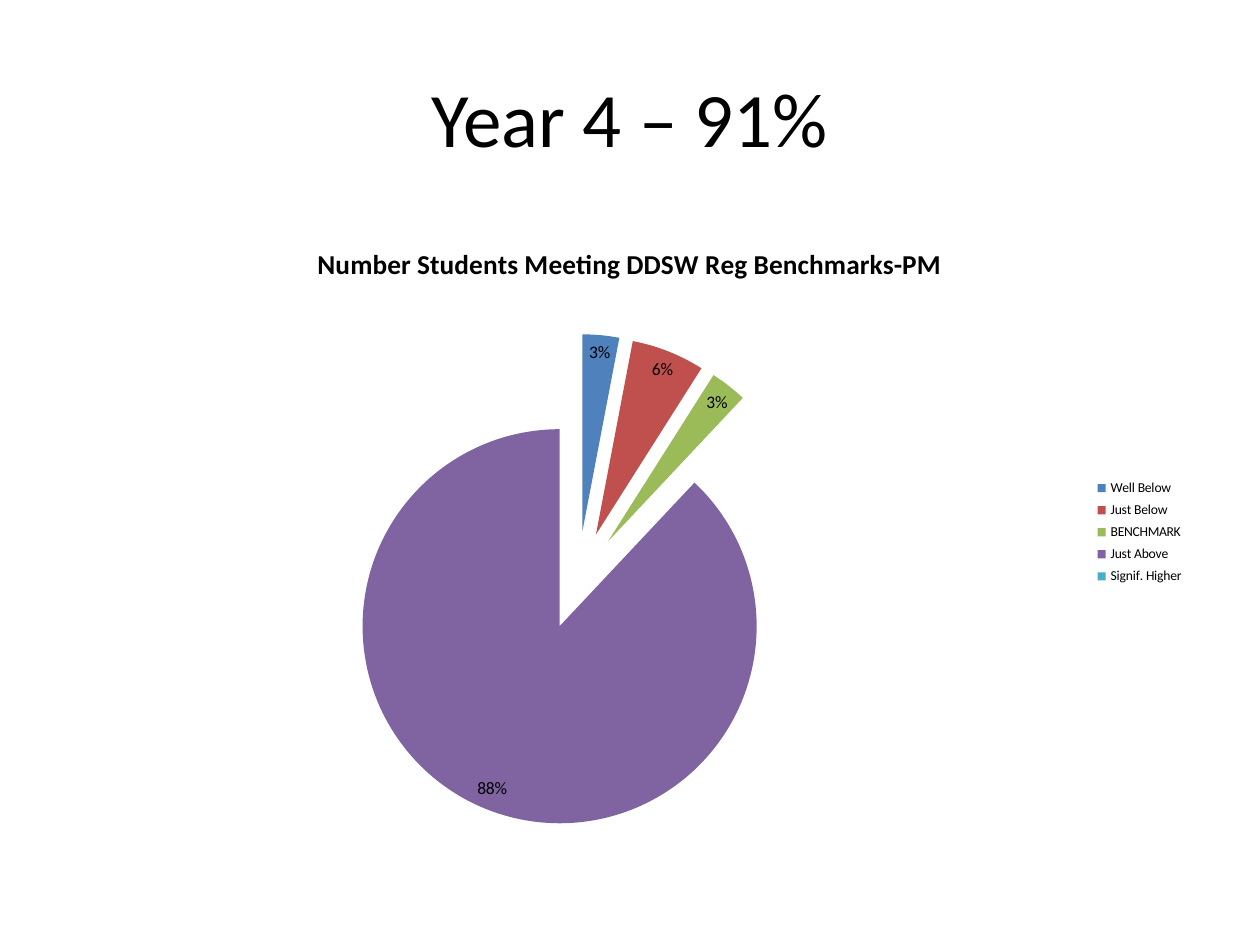
from dataclasses import dataclass

from pptx import Presentation
from pptx.chart.data import CategoryChartData
from pptx.dml.color import RGBColor
from pptx.enum import chart as chart_enum, text
from pptx.oxml import parse_xml
from pptx.oxml.ns import nsdecls
from pptx.util import Inches, Pt


@dataclass(frozen=True)
class Theme:
    font: str = "Calibri"
    ink: str = "000000"
    heading_size: float = 44
    chart_title_size: float = 15.6
    label_size: float = 10
    legend_size: float = 7.8


@dataclass(frozen=True)
class Slice:
    name: str
    share: float
    color: str


THEME = Theme()
EXPLOSION = 25  # percent of the radius

SLICES = [
    Slice("Well Below", 0.03, "4F81BD"),
    Slice("Just Below", 0.06, "C0504D"),
    Slice("BENCHMARK", 0.03, "9BBB59"),
    Slice("Just Above", 0.88, "8064A2"),
    Slice("Signif. Higher", 0, "4BACC6"),
]


def style_font(font, size: float, bold: bool = False) -> None:
    font.name = THEME.font
    font.size = Pt(size)
    font.bold = bold
    font.color.rgb = RGBColor.from_string(THEME.ink)


def add_heading(slide, wording: str) -> None:
    box = slide.shapes.add_textbox(Inches(0.5), Inches(0.3), Inches(9), Inches(1.25))
    frame = box.text_frame
    frame.word_wrap = True
    frame.vertical_anchor = text.MSO_ANCHOR.MIDDLE
    frame.text = wording
    paragraph = frame.paragraphs[0]
    paragraph.alignment = text.PP_ALIGN.CENTER
    style_font(paragraph.runs[0].font, THEME.heading_size)


def add_pie(slide, title: str, slices: list[Slice]) -> None:
    data = CategoryChartData(number_format="0%")
    data.categories = [part.name for part in slices]
    data.add_series("Series 1", [part.share for part in slices])
    chart = slide.shapes.add_chart(
        chart_enum.XL_CHART_TYPE.PIE,
        Inches(0.5), Inches(1.75), Inches(9), Inches(4.95), data,
    ).chart
    style_font(chart.font, THEME.label_size)

    # Title and legend
    chart.has_title = True
    title_frame = chart.chart_title.text_frame
    title_frame.text = title
    style_font(title_frame.paragraphs[0].runs[0].font, THEME.chart_title_size, bold=True)
    chart.has_legend = True
    chart.legend.position = chart_enum.XL_LEGEND_POSITION.RIGHT
    chart.legend.include_in_layout = False
    style_font(chart.legend.font, THEME.legend_size)

    # Slice colours
    plot = chart.plots[0]
    plot.vary_by_categories = True
    series = plot.series[0]
    for index, part in enumerate(slices):
        fill = series.points[index].format.fill
        fill.solid()
        fill.fore_color.rgb = RGBColor.from_string(part.color)

    # Pulled-out slices: the explosion goes ahead of the points
    series._element.dPt_lst[0].addprevious(
        parse_xml(f'<c:explosion {nsdecls("c")} val="{EXPLOSION}"/>')
    )

    # Percentage labels
    labels = series.data_labels
    labels.show_value = True
    labels.number_format = "0%"
    labels.number_format_is_linked = False
    labels.position = chart_enum.XL_LABEL_POSITION.BEST_FIT
    style_font(labels.font, THEME.label_size)


def main() -> None:
    presentation = Presentation()
    presentation.slide_width = Inches(10)
    presentation.slide_height = Inches(7.5)
    slide = presentation.slides.add_slide(presentation.slide_layouts[6])
    add_heading(slide, "Year 4 – 91%")
    add_pie(slide, "Number Students Meeting DDSW Reg Benchmarks-PM", SLICES)
    presentation.save("out.pptx")


if __name__ == "__main__":
    main()
